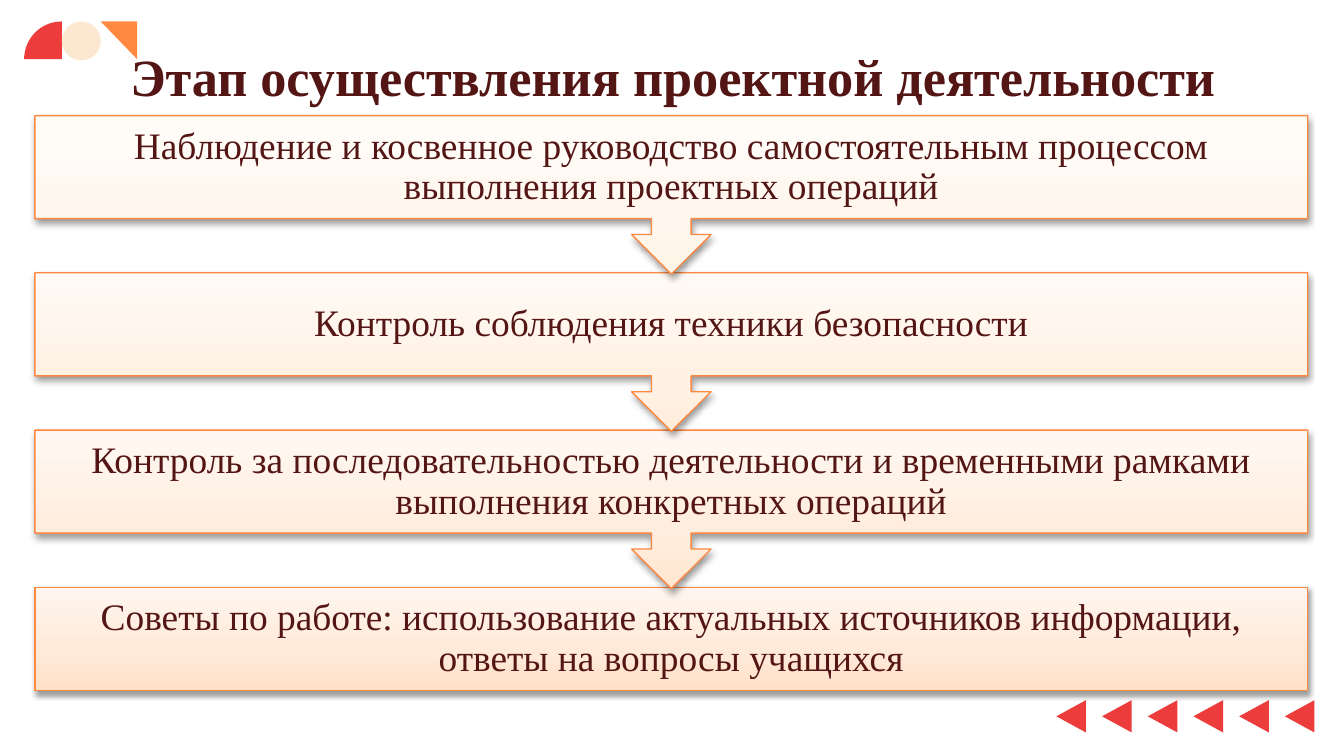
from math import cos, pi, sin

from lxml.etree import SubElement
from pptx import Presentation
from pptx.dml.color import RGBColor
from pptx.enum.shapes import MSO_SHAPE
from pptx.enum.text import MSO_ANCHOR, PP_ALIGN
from pptx.oxml.ns import qn
from pptx.util import Inches, Pt

RED, ORANGE, CREAM, BROWN = "ED3C3C", "FF8941", "FCE8D1", "541515"
TITLE = "Этап осуществления проектной деятельности"
STAGES = [
    ("Наблюдение и косвенное руководство самостоятельным процессом выполнения проектных операций",
     ("FFF4E8", "FFF7EE", "FFFCF8")),
    ("Контроль соблюдения техники безопасности",
     ("FFEDDB", "FFF2E5", "FFFAF5")),
    ("Контроль за последовательностью деятельности и временными рамками выполнения конкретных операций",
     ("FFE6D0", "FFEDDD", "FFF8F2")),
    ("Советы по работе: использование актуальных источников информации, ответы на вопросы учащихся",
     ("FFE0C7", "FFE9D7", "FFF6F0")),
]
STAGE_LEFT, STAGE_TOP, STAGE_STEP = 0.26, 0.86, 1.17
STAGE_WIDTH, BOX_HEIGHT, CALLOUT_HEIGHT = 9.47, 0.77, 1.18


def color(value):
    return RGBColor.from_string(value)


def set_attributes(target, values):
    for name, value in values.items():
        setattr(target, name, value)


def paint(shape, fill):
    shape.shadow.inherit = False
    shape.fill.solid()
    shape.fill.fore_color.rgb = color(fill)
    shape.line.fill.background()


def add_preset(slide, kind, left, top, width, height, rotation=0):
    shape = slide.shapes.add_shape(
        kind, Inches(left), Inches(top), Inches(width), Inches(height))
    shape.rotation = rotation
    return shape


def add_outline(slide, points, fill):
    corners = [(Inches(x), Inches(y)) for x, y in points]
    builder = slide.shapes.build_freeform(*corners[0])
    builder.add_line_segments(corners[1:], close=True)
    paint(builder.convert_to_shape(), fill)


def add_text(slide, text, box, inset, font, paragraph_format, anchor):
    shape = slide.shapes.add_textbox(*map(Inches, box))
    frame = shape.text_frame
    margins = ("margin_left", "margin_top", "margin_right", "margin_bottom")
    set_attributes(frame, dict.fromkeys(margins, Inches(inset)))
    set_attributes(frame, {"word_wrap": True, "vertical_anchor": anchor})
    paragraph = frame.paragraphs[0]
    set_attributes(paragraph, {"alignment": PP_ALIGN.CENTER, **paragraph_format})
    run = paragraph.add_run()
    run.text = text
    set_attributes(run.font, {"name": "Times New Roman", **font})
    run.font.color.rgb = color(BROWN)


def add_gradient(shape, colors):
    gradient = SubElement(shape.element.spPr, qn("a:gradFill"), rotWithShape="0")
    stops = SubElement(gradient, qn("a:gsLst"))
    for position, value in zip((0, 35, 100), colors):
        stop = SubElement(stops, qn("a:gs"), pos=str(position * 1000))
        SubElement(stop, qn("a:srgbClr"), val=value)
    SubElement(gradient, qn("a:lin"), ang=str(270 * 60000), scaled="1")


def add_shadow(shape):
    shape.shadow.inherit = False
    effects = shape.element.spPr.find(qn("a:effectLst"))
    shadow = SubElement(effects, qn("a:outerShdw"), blurRad=str(Pt(3.1)),
                        dist=str(Pt(1.6)), dir=str(90 * 60000), rotWithShape="0")
    black = SubElement(shadow, qn("a:srgbClr"), val="000000")
    SubElement(black, qn("a:alpha"), val="38000")


def add_stage(slide, index, text, colors):
    top = STAGE_TOP + index * STAGE_STEP
    if index == len(STAGES) - 1:
        kind, height, rotation = MSO_SHAPE.RECTANGLE, BOX_HEIGHT, 0
    else:
        kind, height, rotation = MSO_SHAPE.UP_ARROW_CALLOUT, CALLOUT_HEIGHT, 180
    shape = add_preset(slide, kind, STAGE_LEFT, top, STAGE_WIDTH, height, rotation)
    add_gradient(shape, colors)
    shape.line.color.rgb = color(ORANGE)
    shape.line.width = Pt(0.75)
    add_shadow(shape)
    add_text(slide, text, (STAGE_LEFT, top, STAGE_WIDTH, BOX_HEIGHT), 0.16,
             {"size": Pt(20)}, {"line_spacing": 0.9}, MSO_ANCHOR.MIDDLE)


def add_decorations(slide):
    for index in range(6):
        triangle = add_preset(slide, MSO_SHAPE.ISOSCELES_TRIANGLE,
                              7.85 + index * 0.34, 5.22, 0.24, 0.22, 270)
        paint(triangle, RED)
    angles = [step * pi / 48 for step in range(25)]
    arc = [(0.46 - 0.28 * sin(angle), 0.44 - 0.28 * cos(angle)) for angle in angles]
    add_outline(slide, arc + [(0.46, 0.44)], RED)
    add_outline(slide, [(0.75, 0.16), (1.02, 0.44), (1.02, 0.16)], ORANGE)
    paint(add_preset(slide, MSO_SHAPE.OVAL, 0.46, 0.16, 0.29, 0.29), CREAM)


def main():
    presentation = Presentation()
    presentation.slide_width = Inches(10)
    presentation.slide_height = Inches(10 * 9 / 16)
    slide = presentation.slides.add_slide(presentation.slide_layouts[6])
    add_decorations(slide)
    add_text(slide, TITLE, (0.79, 0.23, 8.43, 0.63), 0.1,
             {"size": Pt(28), "bold": True}, {}, MSO_ANCHOR.TOP)
    for index, (text, colors) in reversed(list(enumerate(STAGES))):
        add_stage(slide, index, text, colors)
    presentation.save("out.pptx")


if __name__ == "__main__":
    main()
